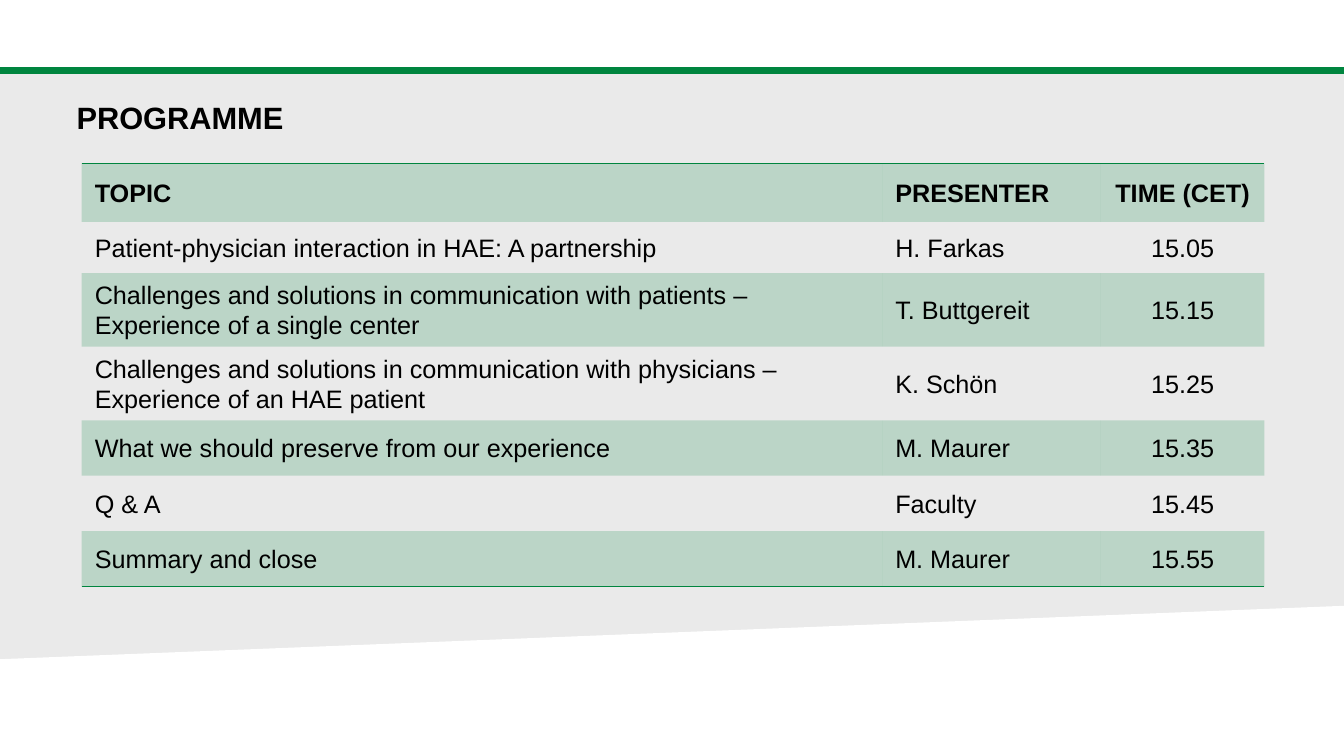
"""Build the programme slide with its timetable of talks."""
from lxml.etree import SubElement
from pptx import Presentation
from pptx.dml.color import RGBColor
from pptx.enum.shapes import MSO_CONNECTOR, MSO_SHAPE
from pptx.enum.text import MSO_ANCHOR, PP_ALIGN
from pptx.oxml import parse_xml
from pptx.oxml.ns import nsdecls, qn
from pptx.util import Inches, Pt

TITLE = "PROGRAMME"
PROGRAMME = [
    ("TOPIC", "PRESENTER", "TIME (CET)"),
    ("Patient-physician interaction in HAE: A partnership", "H. Farkas", "15.05"),
    ("Challenges and solutions in communication with patients – \vExperience of a single center",
     "T. Buttgereit", "15.15"),
    ("Challenges and solutions in communication with physicians – Experience of an HAE patient",
     "K. Schön", "15.25"),
    ("What we should preserve from our experience", "M. Maurer", "15.35"),
    ("Q & A", "Faculty", "15.45"),
    ("Summary and close", "M. Maurer", "15.55"),
]
COLUMN_WIDTHS = (7.94, 2.17, 1.62)
ROW_HEIGHTS = (0.58, 0.51, 0.73, 0.73, 0.55, 0.55, 0.55)
SPACED_ROWS = (4, 5, 6)
TABLE_LEFT, TABLE_TOP = 0.81, 1.62
SLIDE_WIDTH, SLIDE_HEIGHT = 13.33, 7.5
BAND_TOP = 0.7
SLOPE_LEFT, SLOPE_RIGHT = 6.54, 6.01
NO_STYLE_NO_GRID = "{2D5ABB26-0587-4C30-8999-92F81FD0307C}"

GREEN = RGBColor(0x00, 0x85, 0x3F)
GREY = RGBColor(0xEA, 0xEA, 0xEA)
WHITE = RGBColor(0xFF, 0xFF, 0xFF)
BLACK = RGBColor(0x00, 0x00, 0x00)


def write_text(frame, text, size=18, bold=False, align=PP_ALIGN.LEFT, spacing=1.0, after=0):
    frame.word_wrap = True
    paragraph = frame.paragraphs[0]
    paragraph.text = text
    paragraph.alignment = align
    paragraph.line_spacing = spacing
    paragraph.space_after = Pt(after)
    for run in paragraph.runs:
        run.font.name = "Arial"
        run.font.size = Pt(size)
        run.font.bold = bold
        run.font.color.rgb = BLACK


def paint(shape, color):
    shape.shadow.inherit = False
    shape.fill.solid()
    shape.fill.fore_color.rgb = color
    shape.line.fill.background()


def tint_cell(cell):
    cell.fill.solid()
    cell.fill.fore_color.rgb = GREEN
    color = next(cell._tc.tcPr.iter(qn("a:srgbClr")))
    SubElement(color, qn("a:alpha"), val="20000")


def add_border(cell, side):
    cell._tc.get_or_add_tcPr().insert(0, parse_xml(
        f'<a:{side} {nsdecls("a")} w="{Pt(1)}"><a:solidFill>'
        f'<a:srgbClr val="{GREEN}"/></a:solidFill></a:{side}>'))


def add_background(slide):
    band = slide.shapes.add_shape(
        MSO_SHAPE.RECTANGLE, 0, Inches(BAND_TOP),
        Inches(SLIDE_WIDTH), Inches(SLIDE_HEIGHT - BAND_TOP))
    paint(band, GREY)

    builder = slide.shapes.build_freeform(0, Inches(SLOPE_LEFT))
    corners = [(SLIDE_WIDTH, SLOPE_RIGHT), (SLIDE_WIDTH, SLIDE_HEIGHT), (0, SLIDE_HEIGHT)]
    builder.add_line_segments([(Inches(x), Inches(y)) for x, y in corners], close=True)
    paint(builder.convert_to_shape(), WHITE)

    rule = slide.shapes.add_connector(
        MSO_CONNECTOR.STRAIGHT, 0, Inches(BAND_TOP), Inches(SLIDE_WIDTH), Inches(BAND_TOP))
    rule.line.color.rgb = GREEN
    rule.line.width = Pt(5)
    SubElement(rule._element.spPr, qn("a:effectLst"))


def add_programme(slide):
    table = slide.shapes.add_table(
        len(PROGRAMME), len(COLUMN_WIDTHS), Inches(TABLE_LEFT), Inches(TABLE_TOP),
        Inches(sum(COLUMN_WIDTHS)), Inches(sum(ROW_HEIGHTS))).table
    table.horz_banding = False
    table._tbl.tblPr.find(qn("a:tableStyleId")).text = NO_STYLE_NO_GRID
    for column, width in zip(table.columns, COLUMN_WIDTHS):
        column.width = Inches(width)
    for row, height in zip(table.rows, ROW_HEIGHTS):
        row.height = Inches(height)

    last_row, time_column = len(PROGRAMME) - 1, len(COLUMN_WIDTHS) - 1
    for row_index, entries in enumerate(PROGRAMME):
        for column_index, text in enumerate(entries):
            cell = table.cell(row_index, column_index)
            cell.vertical_anchor = MSO_ANCHOR.MIDDLE
            cell.margin_left = cell.margin_right = Inches(0.13)
            cell.margin_top = cell.margin_bottom = 0
            write_text(
                cell.text_frame, text, bold=row_index == 0, spacing=1.07,
                align=PP_ALIGN.CENTER if column_index == time_column else PP_ALIGN.LEFT,
                after=6 if column_index == 0 and row_index in SPACED_ROWS else 0)
            if row_index % 2 == 0:
                tint_cell(cell)
            else:
                cell.fill.background()
            if row_index == 0:
                add_border(cell, "lnT")
            if row_index == last_row:
                add_border(cell, "lnB")


def add_title(slide):
    box = slide.shapes.add_textbox(Inches(0.76), Inches(0.86), Inches(11.89), Inches(0.99))
    frame = box.text_frame
    frame.margin_left = frame.margin_right = frame.margin_bottom = 0
    frame.margin_top = Inches(0.12)
    write_text(frame, TITLE, size=22, bold=True)


def main():
    presentation = Presentation()
    presentation.slide_width = Inches(SLIDE_WIDTH)
    presentation.slide_height = Inches(SLIDE_HEIGHT)
    slide = presentation.slides.add_slide(presentation.slide_layouts[6])
    add_background(slide)
    add_programme(slide)
    add_title(slide)
    presentation.save("out.pptx")


if __name__ == "__main__":
    main()
